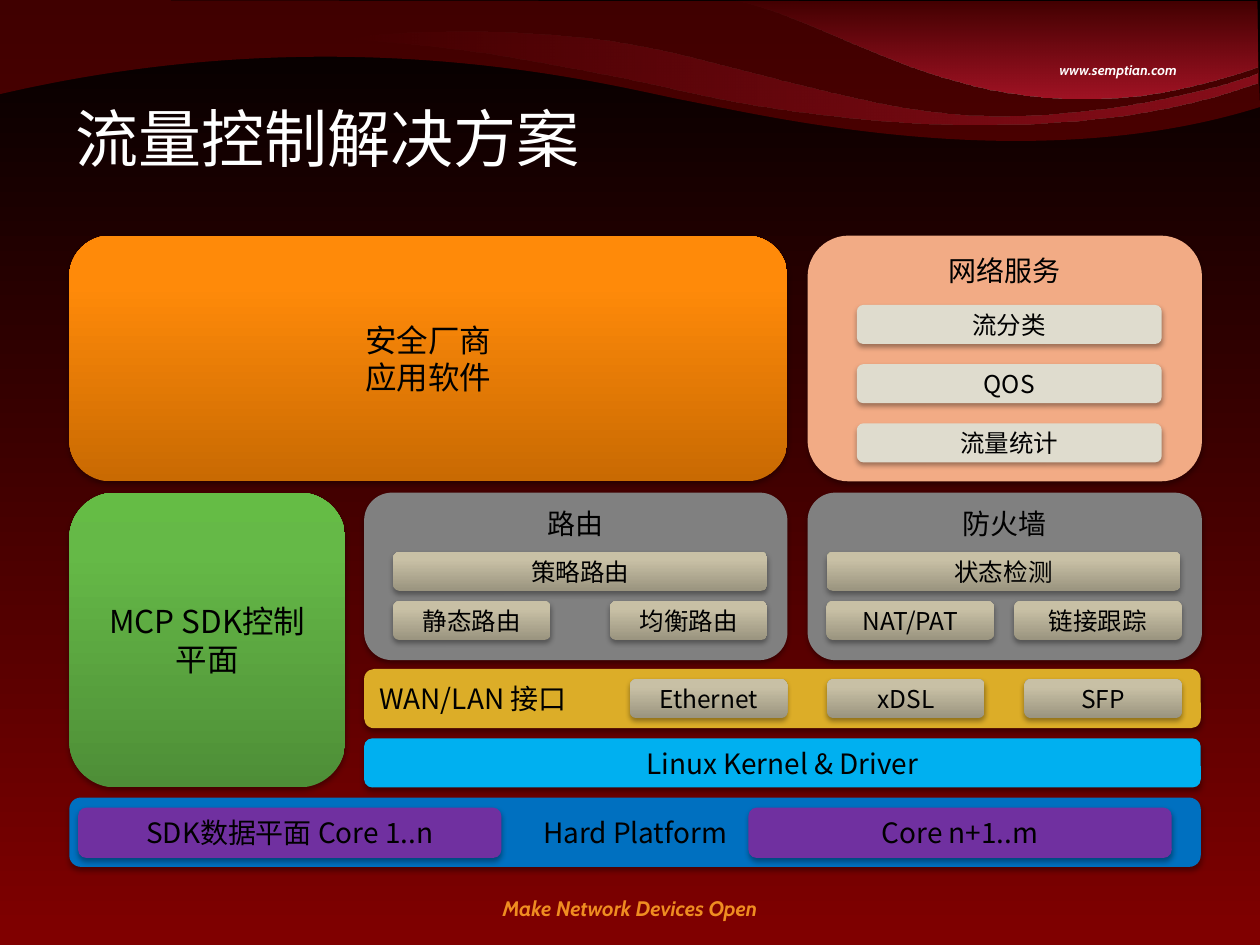
from dataclasses import dataclass
from typing import Any

from lxml import etree
from pptx import Presentation
from pptx import util as u
from pptx.dml.color import RGBColor
from pptx.enum import shapes, text
from pptx.oxml.ns import qn

COLORS = {
    "black": "000000", "white": "FFFFFF", "maroon": "800000", "crimson": "CA1C35",
    "amber": "EF8D21", "blue": "0070C0", "sky": "00B0F0", "gold": "DCAD28",
    "gray": "808080", "salmon": "F2AB85", "cream": "DFDCCE", "purple": "7030A0",
    "stone_dark": "9A947F", "stone": "C8C0A5", "stone_light": "C9C2A5",
    "orange_dark": "C96A02", "orange": "FF8A09", "orange_light": "FF8A0A",
    "green_dark": "4E8E37", "green": "65B947", "green_light": "65BC45",
}
CJK_FONT = "Noto Sans CJK SC"
CENTER, LEFT = text.PP_ALIGN.CENTER, text.PP_ALIGN.LEFT
MIDDLE, TOP = text.MSO_ANCHOR.MIDDLE, text.MSO_ANCHOR.TOP
Point = tuple[float, float]


@dataclass(frozen=True)
class Stop:
    position: int
    color: str
    opacity: int = 100


@dataclass(frozen=True)
class Paint:
    """Stops of a fill (a single stop is solid) and its counter-clockwise angle."""
    stops: tuple[Stop, ...]
    angle: int = 90


@dataclass(frozen=True)
class Box:
    label: str
    left: float
    top: float
    width: float
    height: float
    paint: Paint
    size: int = 16
    anchor: Any = MIDDLE
    align: Any = CENTER


@dataclass(frozen=True)
class Caption:
    label: str
    left: float
    top: float
    width: float
    height: float
    font: dict[str, Any]
    color: str
    align: Any = LEFT
    anchor: Any = TOP


@dataclass(frozen=True)
class Wave:
    """Closed outline of Bézier curves: two control points and an end point each."""
    start: Point
    curves: tuple[tuple[Point, Point, Point], ...]
    paint: Paint


def solid(color: str, opacity: int = 100) -> Paint:
    return Paint((Stop(0, color, opacity),))


def glossy(name: str) -> Paint:
    return Paint((Stop(0, f"{name}_dark"), Stop(80, name), Stop(100, f"{name}_light")))


STONE = glossy("stone")
SLOGAN_FONT = {"name": "Cabin", "bold": True, "italic": True}
BACKGROUND = Paint((Stop(0, "black"), Stop(100, "maroon")), 270)

WAVES = [
    Wave((-0.01, 0.75), (
        ((2.69, 0.12), (4.76, 0.66), (5.4, 0.79)),
        ((6.04, 0.91), (8.15, 1.43), (10, 0.85)),
        ((10, 0.85), (9.98, 0.34), (9.98, 0.01)),
        ((4.97, 0.01), (-0.01, 0), (-0.01, 0)),
        ((-0.01, 0.27), (-0.01, 0.49), (-0.01, 0.75)),
    ), solid("maroon", 50)),
    Wave((3.9, 0.43), (
        ((4.68, 0.56), (5.08, 0.64), (5.41, 0.72)),
        ((5.73, 0.79), (8.16, 1.32), (9.98, 0.66)),
        ((9.98, 0.66), (9.98, 0.68), (9.98, 0.58)),
        ((9.61, 0.73), (8.55, 0.96), (7.68, 0.91)),
        ((6.81, 0.87), (5.58, 0.42), (4.76, 0.32)),
        ((3.93, 0.22), (3.19, 0.25), (2.73, 0.31)),
        ((2.74, 0.32), (3.19, 0.33), (3.9, 0.43)),
    ), Paint((Stop(0, "crimson", 0), Stop(100, "crimson", 50)), 0)),
    Wave((9.98, -0.01), (
        ((9.98, 0.26), (9.98, 0.53), (9.98, 0.53)),
        ((7.88, 1.27), (6.78, 0.18), (5.77, -0.01)),
        ((5.77, -0.01), (7.88, -0.01), (9.98, -0.01)),
    ), Paint((Stop(0, "crimson", 0), Stop(100, "crimson", 70)), 270)),
]

CAPTIONS = [
    Caption("Make Network Devices Open", 0, 7.06, 10, 0.3,
            SLOGAN_FONT | {"size": u.Pt(12)}, "amber", CENTER),
    Caption("www.semptian.com", 8.31, 0.44, 1.14, 0.23,
            SLOGAN_FONT | {"size": u.Pt(8)}, "white"),
    Caption("流量控制解决方案", 0.5, 0.55, 7.58, 1.08,
            {"name": "Karla", "size": u.Pt(36)}, "white", anchor=MIDDLE),
]


def chip(label: str, left: float, top: float, width: float, paint: Paint = STONE) -> Box:
    return Box(label, left, top, width, 0.31, paint, 14)


BOXES = [
    Box("Hard Platform", 0.55, 6.33, 8.98, 0.55, solid("blue")),
    Box("Linux Kernel & Driver", 2.89, 5.86, 6.64, 0.39, solid("sky")),
    Box("WAN/LAN 接口", 2.89, 5.31, 6.64, 0.47, solid("gold"), align=LEFT),
    *(chip(label, 5 + 1.565 * column, 5.39, 1.25)
      for column, label in enumerate(("Ethernet", "xDSL", "SFP"))),
    Box("路由", 2.89, 3.91, 3.36, 1.33, solid("gray"), anchor=TOP),
    chip("静态路由", 3.12, 4.77, 1.25),
    chip("策略路由", 3.12, 4.38, 2.97),
    chip("均衡路由", 4.84, 4.77, 1.25),
    Box("防火墙", 6.41, 3.91, 3.13, 1.33, solid("gray"), anchor=TOP),
    chip("状态检测", 6.56, 4.38, 2.81),
    chip("NAT/PAT", 6.56, 4.77, 1.33),
    chip("链接跟踪", 8.05, 4.77, 1.33),
    Box("网络服务", 6.41, 1.87, 3.13, 1.95, solid("salmon"), anchor=TOP),
    *(chip(label, 6.8, 2.42 + 0.47 * row, 2.42, solid("cream"))
      for row, label in enumerate(("流分类", "QOS", "流量统计"))),
    Box("SDK数据平面 Core 1..n", 0.62, 6.41, 3.36, 0.4, solid("purple")),
    Box("安全厂商\n应用软件", 0.55, 1.87, 5.7, 1.95, glossy("orange"), 18),
    Box("MCP SDK控制平面", 0.55, 3.91, 2.19, 2.34, glossy("green"), 18),
    Box("Core n+1..m", 5.94, 6.41, 3.36, 0.4, solid("purple")),
]


def add_color(parent: Any, color: str, opacity: int) -> None:
    element = etree.SubElement(parent, qn("a:srgbClr"), val=COLORS[color])
    if opacity < 100:
        etree.SubElement(element, qn("a:alpha"), val=str(opacity * 1000))


def apply_paint(fill: Any, owner: Any, paint: Paint) -> None:
    """Fill from a Paint; owner is the XML element that holds the fill."""
    if len(paint.stops) == 1:
        fill.solid()
        target = next(owner.iter(qn("a:solidFill")))
        add_color(target, paint.stops[0].color, paint.stops[0].opacity)
        return
    fill.gradient()
    fill.gradient_angle = paint.angle
    stop_list = next(owner.iter(qn("a:gsLst")))
    for child in list(stop_list):
        stop_list.remove(child)
    for stop in paint.stops:
        element = etree.SubElement(stop_list, qn("a:gs"), pos=str(stop.position * 1000))
        add_color(element, stop.color, stop.opacity)


def finish_shape(shape: Any, paint: Paint) -> None:
    apply_paint(shape.fill, shape._element.spPr, paint)
    shape.line.fill.background()
    shape.shadow.inherit = False


def add_soft_shadow(shape: Any) -> None:
    effects = shape._element.spPr.find(qn("a:effectLst"))
    shadow = etree.SubElement(effects, qn("a:outerShdw"), blurRad=str(u.Pt(3.1)),
                              dist=str(u.Pt(1.8)), dir="5400000", rotWithShape="0")
    add_color(shadow, "black", 35)


def write_text(shape: Any, label: str, font: dict[str, Any], color: str,
               align: Any, anchor: Any) -> None:
    frame = shape.text_frame
    frame.text = label
    frame.word_wrap = True
    frame.vertical_anchor = anchor
    for paragraph in frame.paragraphs:
        paragraph.alignment = align
        for run in paragraph.runs:
            for name, value in font.items():
                setattr(run.font, name, value)
            run.font.color.rgb = RGBColor.from_string(COLORS[color])
            etree.SubElement(run._r.get_or_add_rPr(), qn("a:ea"), typeface=CJK_FONT)


def bend_lines(shape: Any) -> None:
    """Join every three line segments of a freeform into one Bézier curve."""
    lines = list(shape._element.iter(qn("a:lnTo")))
    for first in range(0, len(lines), 3):
        curve = etree.Element(qn("a:cubicBezTo"))
        lines[first].addprevious(curve)
        for line in lines[first:first + 3]:
            curve.append(line[0])
            line.getparent().remove(line)


def draw_wave(slide: Any, wave: Wave) -> None:
    points = [wave.start, *(point for curve in wave.curves for point in curve)]
    outline = [(u.Inches(x), u.Inches(y)) for x, y in points]
    builder = slide.shapes.build_freeform(*outline[0])
    builder.add_line_segments(outline[1:], close=True)
    shape = builder.convert_to_shape()
    bend_lines(shape)
    finish_shape(shape, wave.paint)


def bounds(item: Any) -> list[Any]:
    return [u.Inches(n) for n in (item.left, item.top, item.width, item.height)]


def draw_caption(slide: Any, caption: Caption) -> None:
    shape = slide.shapes.add_textbox(*bounds(caption))
    write_text(shape, caption.label, caption.font, caption.color,
               caption.align, caption.anchor)


def draw_box(slide: Any, box: Box) -> None:
    shape = slide.shapes.add_shape(shapes.MSO_SHAPE.ROUNDED_RECTANGLE, *bounds(box))
    finish_shape(shape, box.paint)
    add_soft_shadow(shape)
    font = {"name": CJK_FONT, "size": u.Pt(box.size)}
    write_text(shape, box.label, font, "black", box.align, box.anchor)


def main() -> None:
    presentation = Presentation()
    presentation.slide_width, presentation.slide_height = u.Inches(10), u.Inches(7.5)
    slide = presentation.slides.add_slide(presentation.slide_layouts[6])
    apply_paint(slide.background.fill, slide._element, BACKGROUND)
    for wave in WAVES:
        draw_wave(slide, wave)
    for caption in CAPTIONS:
        draw_caption(slide, caption)
    for box in BOXES:
        draw_box(slide, box)
    presentation.save("out.pptx")


if __name__ == "__main__":
    main()
